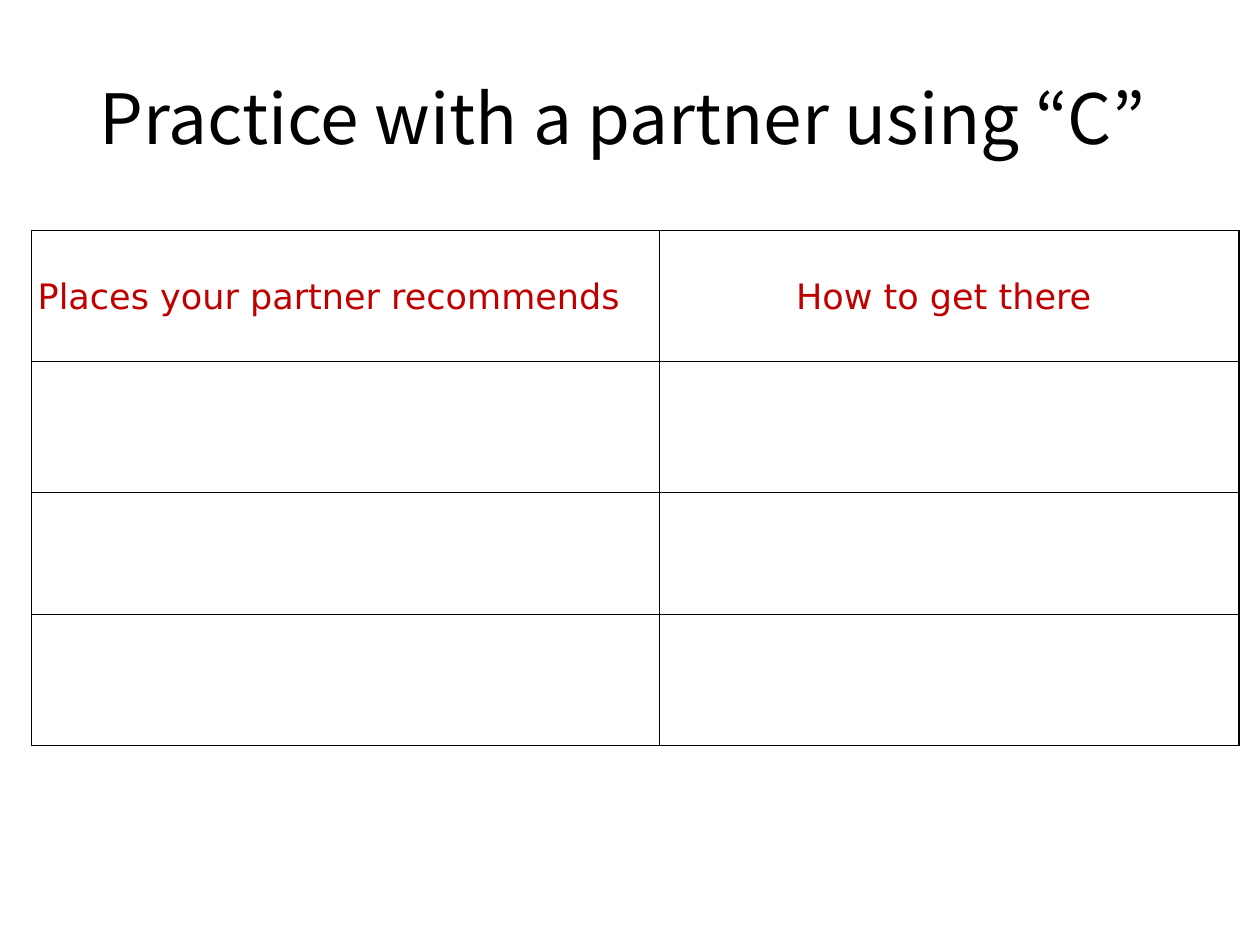
from lxml.etree import SubElement
from pptx import Presentation
from pptx.dml.color import RGBColor
from pptx.enum.text import MSO_ANCHOR, PP_ALIGN
from pptx.oxml.ns import qn
from pptx.util import Cm, Pt

BLACK = RGBColor(0x00, 0x00, 0x00)
RED = RGBColor(0xC0, 0x00, 0x00)


class Deck:
    title_font = "Noto Sans CJK KR"
    table_font = "DejaVu Sans"
    thin, thick = 0.5, 1

    def __init__(self, prs):
        self.s = prs.slides.add_slide(prs.slide_layouts[6])

    def add_text(self, tf, text, font, size, color):
        p = tf.paragraphs[0]
        p.alignment = PP_ALIGN.CENTER
        r = p.add_run()
        r.text = text
        r.font.name = font
        r.font.size = Pt(size)
        r.font.color.rgb = color

    def title(self, text, left, top, width, height):
        tf = self.s.shapes.add_textbox(Cm(left), Cm(top), Cm(width), Cm(height)).text_frame
        tf.word_wrap = True
        tf.vertical_anchor = MSO_ANCHOR.MIDDLE
        tf.margin_right = Cm(0.56)
        self.add_text(tf, text, self.title_font, 39.6, BLACK)

    def border(self, cell, side, width):
        tcPr = cell._tc.get_or_add_tcPr()
        ln = SubElement(tcPr, qn(f"a:ln{side}"), w=str(Pt(width)))
        fill = SubElement(ln, qn("a:solidFill"))
        SubElement(fill, qn("a:srgbClr"), val=str(BLACK))

    def table(self, headers, left, top, widths, heights):
        rows, cols = len(heights), len(widths)
        frame = self.s.shapes.add_table(
            rows, cols, Cm(left), Cm(top), Cm(sum(widths)), Cm(sum(heights)))
        table = frame.table
        table.first_row = table.horz_banding = False
        for column, width in zip(table.columns, widths):
            column.width = Cm(width)
        for i, height in enumerate(heights):
            table.rows[i].height = Cm(height)
            for j in range(cols):
                cell = table.cell(i, j)
                outer = {"L": j == 0, "R": j == cols - 1,
                         "T": i == 0, "B": i == rows - 1}
                for side, is_outer in outer.items():
                    self.border(cell, side, self.thick if is_outer else self.thin)
                cell.fill.background()
                cell.vertical_anchor = MSO_ANCHOR.MIDDLE
                cell.margin_left = cell.margin_top = Cm(0.03)
                cell.margin_right = Cm(0.03)
                cell.margin_bottom = Cm(0)
        for j, (text, margin) in enumerate(headers):
            cell = table.cell(0, j)
            cell.margin_right = Cm(margin)
            self.add_text(cell.text_frame, text, self.table_font, 20, RED)


def main():
    prs = Presentation()
    prs.slide_width, prs.slide_height = Cm(25.4), Cm(19.05)
    deck = Deck(prs)
    deck.title("Practice with a partner using “C”", 1.27, 0.76, 22.86, 3.18)
    deck.table(
        [("Places your partner recommends", 0.7), ("How to get there", 0.25)],
        0.64, 4.65, [12.65, 11.69], [2.64, 2.64, 2.46, 2.64])
    prs.save("out.pptx")


if __name__ == "__main__":
    main()
